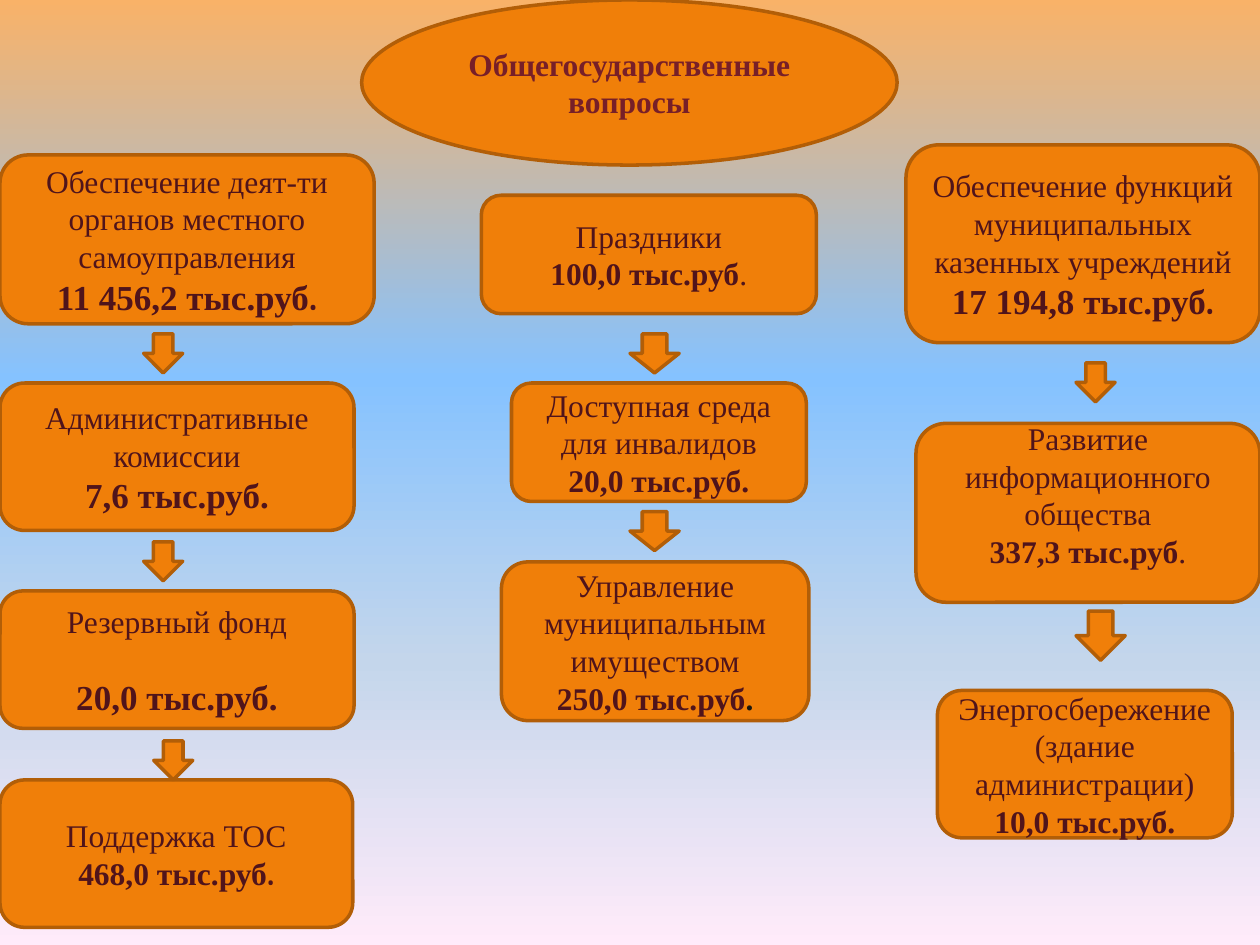
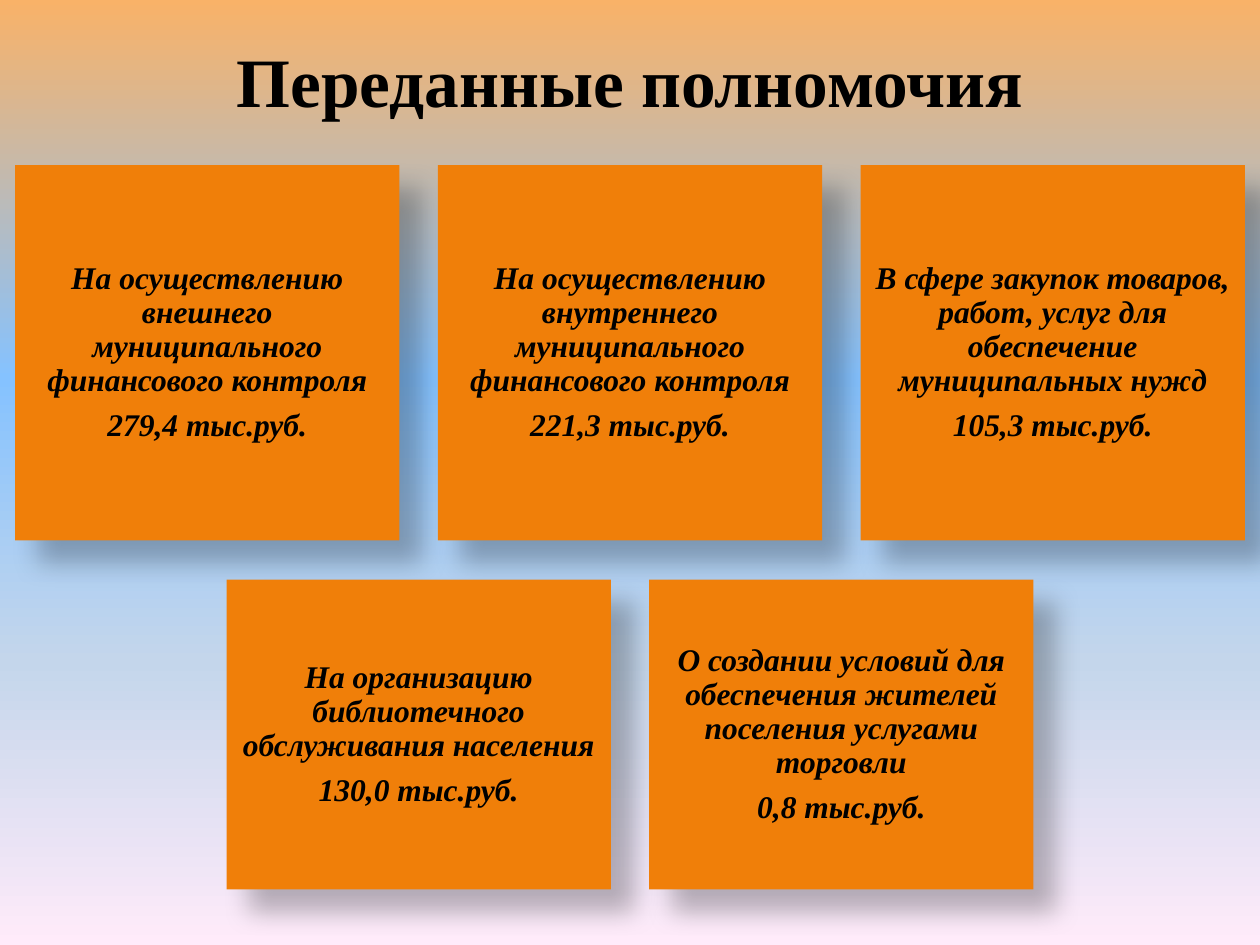
from lxml.etree import SubElement
from pptx import Presentation
from pptx.dml.color import RGBColor
from pptx.enum.shapes import MSO_SHAPE
from pptx.enum.text import MSO_ANCHOR, PP_ALIGN
from pptx.oxml.ns import qn
from pptx.util import Inches, Pt

ORANGE = RGBColor(0xF0, 0x7F, 0x09)
BROWN = RGBColor(0xB2, 0x5E, 0x07)
WINE = RGBColor(0x77, 0x1F, 0x28)
MAROON = RGBColor(0x50, 0x14, 0x1B)
BLACK = RGBColor(0x00, 0x00, 0x00)
INK = RGBColor(0x1B, 0x18, 0x10)
SKY = (
    (0, RGBColor(0xF9, 0xB2, 0x68)),
    (40, RGBColor(0x85, 0xC2, 0xFF)),
    (70, RGBColor(0xC4, 0xD6, 0xEB)),
    (100, RGBColor(0xFF, 0xEB, 0xFA)),
)
FONT = "Times New Roman"
COLUMNS, ROWS = 100, 75
CARD_WIDTH, CARD_GAP = 30.5, 3.05

SERIF_DOT = {"font": "Cambria"}
LIGHT_DOT = {"bold": False}

# name, amount, (left, top, width, height), options
BUDGET_BOXES = (
    ("Обеспечение деят-ти органов местного самоуправления", "11 456,2 тыс.руб",
     (0, 12.3, 29.7, 13.4), {"size": 20, "dot": SERIF_DOT}),
    ("Административные комиссии", "7,6 тыс.руб",
     (0, 30.4, 28.1, 11.7), {"size": 20}),
    ("Резервный фонд", "20,0 тыс.руб",
     (0, 46.9, 28.1, 10.9), {"size": 20, "gap": 20.7}),
    ("Поддержка ТОС", "468,0 тыс.руб",
     (0, 61.9, 28, 11.7), {"dot": SERIF_DOT}),
    ("Праздники", "100,0 тыс.руб",
     (38.2, 15.5, 26.6, 9.4), {"dot": LIGHT_DOT}),
    ("Доступная среда для инвалидов", "20,0 тыс.руб",
     (40.6, 30.4, 23.4, 9.4), {}),
    ("Управление муниципальным имуществом", "250,0 тыс.руб",
     (39.8, 44.6, 24.4, 12.6), {"dot": {"color": INK}}),
    ("Обеспечение функций муниципальных казенных учреждений", "17 194,8 тыс.руб",
     (71.9, 11.5, 28.1, 15.7), {"size": 20, "dot": SERIF_DOT}),
    ("Развитие информационного общества", "337,3 тыс.руб",
     (72.7, 33.6, 27.3, 14.2), {"dot": LIGHT_DOT, "bottom_inset": 0.34}),
    ("Энергосбережение (здание администрации)", "10,0 тыс.руб",
     (74.4, 54.8, 23.4, 11.7), {}),
)
ARROWS = (
    (11.4, 26.5, 3.1, 3.1), (11.4, 43, 3.1, 3.1), (12.2, 58.8, 3.1, 3.1),
    (50, 26.5, 3.9, 3.1), (50, 40.6, 3.9, 3.1),
    (85.4, 28.8, 3.1, 3.1), (85.4, 48.5, 3.9, 3.9),
)
# top, height, cards of the row
CARD_ROWS = (
    (13.1, 29.8, (
        ("На осуществлению внешнего муниципального финансового контроля", "279,4 тыс.руб."),
        ("На осуществлению внутреннего муниципального финансового контроля", "221,3 тыс.руб."),
        ("В сфере закупок товаров, работ, услуг для обеспечение муниципальных нужд",
         "105,3 тыс.руб."),
    )),
    (46, 24.6, (
        ("На организацию библиотечного обслуживания населения", "130,0 тыс.руб."),
        ("О создании условий для обеспечения жителей поселения услугами торговли",
         "0,8 тыс.руб."),
    )),
)


def write(paragraph, text, size=18, color=MAROON, bold=False, italic=False, font=FONT):
    """Add one formatted run to a centred paragraph."""
    paragraph.alignment = PP_ALIGN.CENTER
    run = paragraph.add_run()
    run.text = text
    run.font.name = font
    run.font.size = Pt(size)
    run.font.bold = bold
    run.font.italic = italic
    run.font.color.rgb = color


class Deck:
    def __init__(self):
        self.presentation = Presentation()
        self.presentation.slide_width = Inches(10)
        self.presentation.slide_height = Inches(7.5)
        self.slide = None

    def new_slide(self):
        self.slide = self.presentation.slides.add_slide(self.presentation.slide_layouts[6])
        fill = self.slide.background.fill
        fill.gradient()
        fill.gradient_angle = 270
        stops = self.slide.element.find(".//" + qn("a:gsLst"))
        for stop in list(stops):
            stops.remove(stop)
        for position, color in SKY:
            stop = SubElement(stops, qn("a:gs"), pos=str(position * 1000))
            SubElement(stop, qn("a:srgbClr"), val=str(color))

    def place(self, left, top, width, height):
        """Turn grid columns and rows into slide lengths."""
        column = self.presentation.slide_width / COLUMNS
        row = self.presentation.slide_height / ROWS
        return round(left * column), round(top * row), round(width * column), round(height * row)

    def shape(self, kind, area, outlined=True):
        shape = self.slide.shapes.add_shape(kind, *self.place(*area))
        shape.shadow.inherit = False
        shape.fill.solid()
        shape.fill.fore_color.rgb = ORANGE
        if outlined:
            shape.line.color.rgb = BROWN
            shape.line.width = Pt(2)
        else:
            shape.line.fill.background()
        shape.text_frame.word_wrap = True
        shape.text_frame.vertical_anchor = MSO_ANCHOR.MIDDLE
        return shape

    def topic(self, text, area):
        ellipse = self.shape(MSO_SHAPE.OVAL, area)
        write(ellipse.text_frame.paragraphs[0], text, color=WINE, bold=True)

    def budget_box(self, name, amount, area, size=18, dot=None, gap=0, bottom_inset=0.05):
        frame = self.shape(MSO_SHAPE.ROUNDED_RECTANGLE, area).text_frame
        frame.margin_bottom = Inches(bottom_inset)
        write(frame.paragraphs[0], name)
        paragraph = frame.add_paragraph()
        paragraph.space_before = Pt(gap)
        style = {"size": size, "bold": True}
        write(paragraph, amount, **style)
        write(paragraph, ".", **{**style, **(dot or {})})

    def arrow(self, area):
        self.shape(MSO_SHAPE.DOWN_ARROW, area)

    def title(self, text, area):
        frame = self.slide.shapes.add_textbox(*self.place(*area)).text_frame
        frame.word_wrap = True
        frame.vertical_anchor = MSO_ANCHOR.TOP
        frame.margin_top = 0
        write(frame.paragraphs[0], text, size=39.6, color=BLACK, bold=True)

    def cast_shadow(self, shape):
        effects = shape.element.spPr.find(qn("a:effectLst"))
        shadow = SubElement(effects, qn("a:outerShdw"), blurRad=str(Pt(15)), dist=str(Pt(18)),
                            dir=str(45 * 60000), algn="tl", rotWithShape="0")
        color = SubElement(shadow, qn("a:srgbClr"), val=str(BLACK))
        SubElement(color, qn("a:alpha"), val="26000")

    def card(self, name, amount, area):
        rectangle = self.shape(MSO_SHAPE.RECTANGLE, area, outlined=False)
        self.cast_shadow(rectangle)
        frame = rectangle.text_frame
        frame.margin_left = frame.margin_right = Inches(0.07)
        frame.margin_top = frame.margin_bottom = Inches(0.07)
        for paragraph, text in ((frame.paragraphs[0], name), (frame.add_paragraph(), amount)):
            paragraph.line_spacing = 0.9
            paragraph.space_after = Pt(6.3)
            write(paragraph, text, color=BLACK, bold=True, italic=True)

    def card_row(self, top, height, cards):
        """Lay out one centred row of equal cards."""
        pitch = CARD_WIDTH + CARD_GAP
        start = (COLUMNS - len(cards) * pitch + CARD_GAP) / 2
        for index, (name, amount) in enumerate(cards):
            self.card(name, amount, (start + index * pitch, top, CARD_WIDTH, height))


def main():
    deck = Deck()

    deck.new_slide()
    deck.topic("Общегосударственные вопросы", (28.7, 0, 42.5, 13.1))
    for name, amount, area, options in BUDGET_BOXES:
        deck.budget_box(name, amount, area, **options)
    for area in ARROWS:
        deck.arrow(area)

    deck.new_slide()
    deck.title("Переданные полномочия", (5, 3, 90, 12.5))
    for top, height, cards in CARD_ROWS:
        deck.card_row(top, height, cards)

    deck.presentation.save("out.pptx")


if __name__ == "__main__":
    main()
